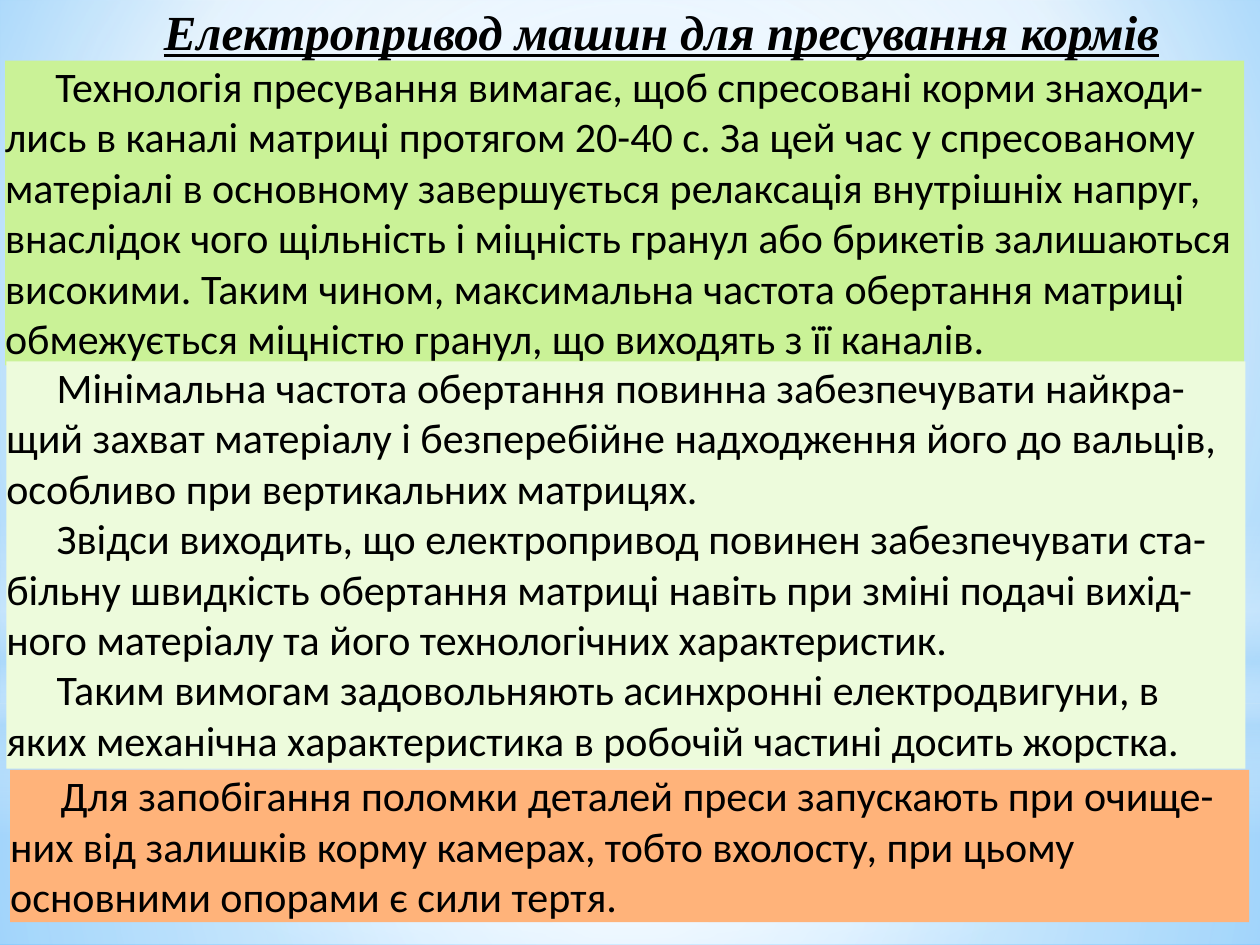
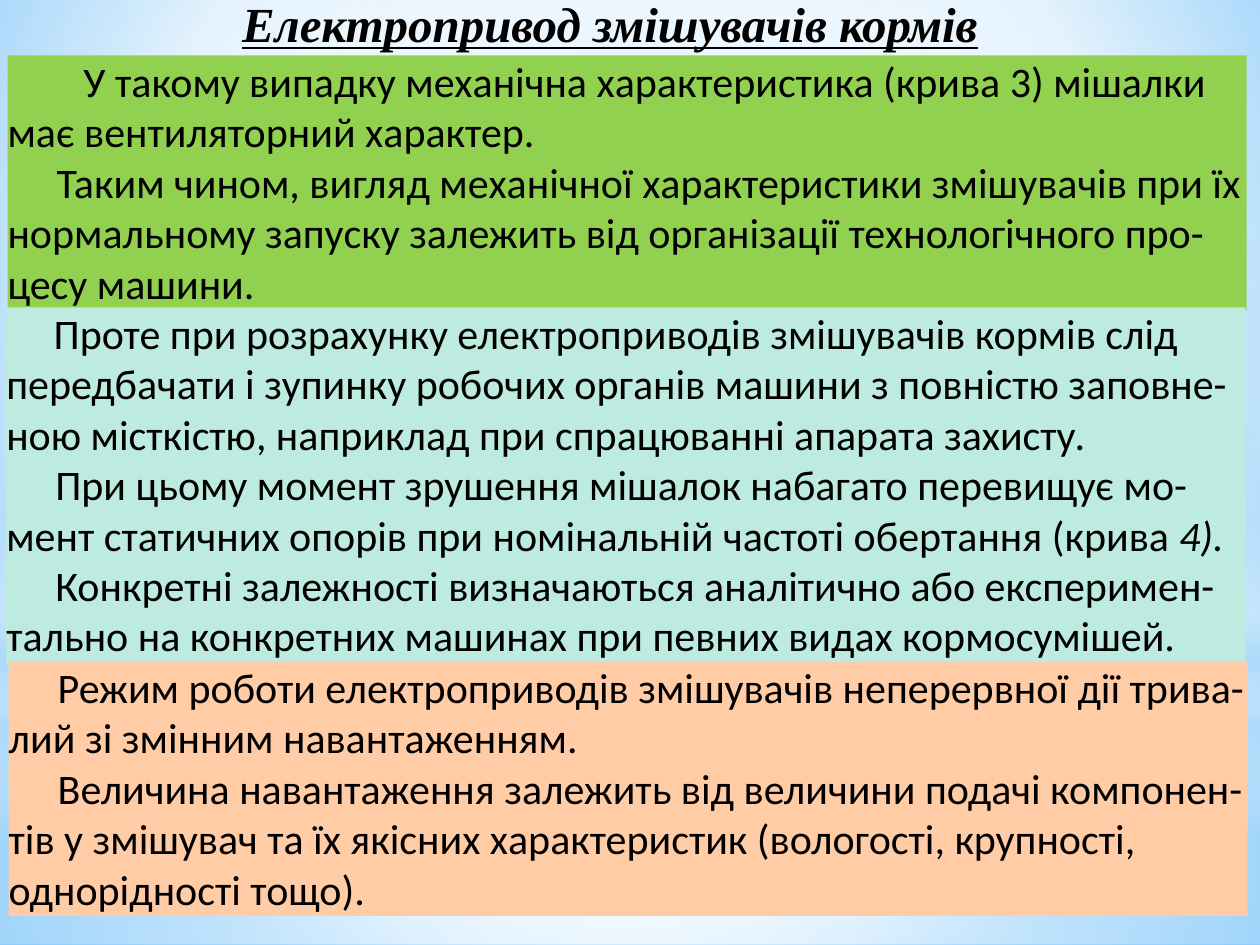
"""Build two slides on electric drives of feed presses and feed mixers."""
from lxml import etree
from pptx import Presentation
from pptx.dml.color import RGBColor
from pptx.enum.shapes import MSO_SHAPE
from pptx.enum.text import MSO_ANCHOR, MSO_AUTO_SIZE, PP_ALIGN
from pptx.oxml.ns import nsdecls, qn
from pptx.util import Pt

RECTANGLE, OVAL = MSO_SHAPE.RECTANGLE, MSO_SHAPE.OVAL
LEFT, CENTER = PP_ALIGN.LEFT, PP_ALIGN.CENTER
TOP, NO_FIT = MSO_ANCHOR.TOP, MSO_AUTO_SIZE.NONE
TITLE_ONLY = 5
WIDTH, HEIGHT = 720, 540
BAND_WIDTH = 708
BLACK, WHITE, PALE_BLUE = "000000", "FFFFFF", "B4DCFA"

TITLE_FONT = {"name": "Times New Roman", "size": Pt(28), "bold": True,
              "italic": True, "underline": True}
BODY_FONT = {"name": "Calibri", "size": Pt(24)}
FRAME = {"margin_left": 0, "margin_top": 0, "margin_right": 0, "margin_bottom": 0,
         "vertical_anchor": TOP, "auto_size": NO_FIT}

MIDDLE = (50, 50, 50, 50)
BACKDROP = ([(0, "9ED5FF", 100), (60, WHITE, 100), (100, "5BB9FF", 100)], (20, 10, 20, 60))
GLOWS = [
    (RECTANGLE, (402, 138), [(0, WHITE, 91), (37, WHITE, 76), (100, PALE_BLUE, 79)], MIDDLE),
    (RECTANGLE, (0, 402), [(0, WHITE, 89), (48, WHITE, 62), (100, PALE_BLUE, 79)], MIDDLE),
    (RECTANGLE, (297, 180), [(0, WHITE, 0), (29, WHITE, 30), (45, PALE_BLUE, 40),
                             (55, WHITE, 26), (65, PALE_BLUE, 60), (100, WHITE, 0)], None),
    (OVAL, (126, 402), [(0, WHITE, 100), (56, WHITE, 0)], MIDDLE),
]

SLIDES = [
    {
        "title": "Електропривод машин для пресування кормів",
        "place": (93.6, 0.7, 574.6, 33.8),
        "paragraph": {"alignment": LEFT, "line_spacing": 1.0},
        "wrap": False,
        "bands": [
            ("CAF297", (2.9, 34.6, 174.2), [
                (28.8, ["Технологія пресування вимагає, щоб спресовані корми знаходи-лись в каналі "
                        "матриці протягом 20-40 с. За цей час у спресованому матеріалі в основному "
                        "завершується релаксація внутрішніх напруг, внаслідок чого щільність і "
                        "міцність гранул або брикетів залишаються високими. Таким чином, "
                        "максимальна частота обертання матриці обмежується міцністю гранул, що "
                        "виходять з її каналів."])]),
            ("EDFBDC", (3.6, 206.6, 232.6), [
                (28.8, ["Мінімальна частота обертання повинна забезпечувати найкра-щий захват "
                        "матеріалу і безперебійне надходження його до вальців, особливо при "
                        "вертикальних матрицях."]),
                (28.8, ["Звідси виходить, що електропривод повинен забезпечувати ста-більну "
                        "швидкість обертання матриці навіть при зміні подачі вихід-ного матеріалу "
                        "та його технологічних характеристик."]),
                (28.8, ["Таким вимогам задовольняють асинхронні електродвигуни, в яких механічна "
                        "характеристика в робочій частині досить жорстка."])]),
            ("FFB37A", (5.8, 439.9, 87.1), [
                (28.8, ["Для запобігання поломки деталей преси запускають при очище-них від "
                        "залишків корму камерах, тобто вхолосту, при цьому основними опорами є "
                        "сили тертя."])]),
        ],
    },
    {
        "title": "Електропривод змішувачів кормів",
        "place": (42.5, 1.4, 612, 28.8),
        "paragraph": {"alignment": CENTER, "line_spacing": 0.85},
        "wrap": True,
        "bands": [
            ("92D050", (4.3, 31.7, 145.4), [
                (43.4, ["У такому випадку механічна характеристика (крива 3) мішалки має "
                        "вентиляторний характер."]),
                (28, ["Таким чином, вигляд механічної характеристики змішувачів при їх "
                      "нормальному запуску залежить від організації технологічного про-цесу "
                      "машини."])]),
            ("BEEBDF", (3.6, 175.7, 203.8), [
                (27.1, ["Проте при розрахунку електроприводів змішувачів кормів слід передбачати і "
                        "зупинку робочих органів машини з повністю заповне-ною місткістю, "
                        "наприклад при спрацюванні апарата захисту."]),
                (28, ["При цьому момент зрушення мішалок набагато перевищує мо-мент статичних "
                      "опорів при номінальній частоті обертання (крива ", "4)."]),
                (28, ["Конкретні залежності визначаються аналітично або експеримен-тально на "
                      "конкретних машинах при певних видах кормосумішей."])]),
            ("FFCCA6", (5, 378, 145.4), [
                (28, ["Режим роботи електроприводів змішувачів неперервної дії трива-лий зі "
                      "змінним навантаженням."]),
                (28, ["Величина навантаження залежить від величини подачі компонен-тів у змішувач "
                      "та їх якісних характеристик (вологості, крупності, однорідності тощо)."])]),
        ],
    },
]


def apply(target, values):
    for name, value in values.items():
        setattr(target, name, value)


def color(hex_code):
    return RGBColor.from_string(hex_code)


def style_font(font, values):
    apply(font, values)
    font.color.rgb = color(BLACK)


def paint_gradient(fill, element, stops, focus):
    fill.solid()
    colors = "".join(
        f'<a:gs pos="{place * 1000}"><a:srgbClr val="{code}">'
        f'<a:alpha val="{opacity * 1000}"/></a:srgbClr></a:gs>'
        for place, code, opacity in stops)
    if focus:
        edges = " ".join(f'{side}="{value * 1000}"' for side, value in zip("ltrb", focus))
        direction = f'<a:path path="circle"><a:fillToRect {edges}/></a:path>'
    else:
        direction = '<a:lin ang="5400000" scaled="0"/>'
    gradient = etree.fromstring(
        f'<a:gradFill {nsdecls("a")} rotWithShape="1"><a:gsLst>{colors}</a:gsLst>'
        f'{direction}</a:gradFill>')
    solid = next(element.iter(qn("a:solidFill")))
    solid.getparent().replace(solid, gradient)


def add_plain_shape(slide, kind, place):
    shape = slide.shapes.add_shape(kind, *map(Pt, place))
    shape.shadow.inherit = False
    shape.line.fill.background()
    return shape


def decorate_master(master, slide):
    paint_gradient(master.background.fill, master.element.cSld, *BACKDROP)
    tree = master.shapes.element
    for order, (kind, (top, height), stops, focus) in enumerate(GLOWS):
        glow = add_plain_shape(slide, kind, (0, top, WIDTH, height))
        paint_gradient(glow.fill, glow.element.spPr, stops, focus)
        glow.element.nvSpPr.cNvPr.set("id", str(100 + order))
        tree.insert(2 + order, glow.element)


def add_title(slide, content):
    title = slide.shapes.title
    apply(title, dict(zip(("left", "top", "width", "height"), map(Pt, content["place"]))))
    frame = title.text_frame
    frame.text = content["title"]
    apply(frame, FRAME | {"word_wrap": content["wrap"]})
    para = frame.paragraphs[0]
    apply(para, content["paragraph"])
    style_font(para.runs[0].font, TITLE_FONT)


def add_band(slide, fill_code, place, paragraphs):
    left, top, height = place
    box = add_plain_shape(slide, RECTANGLE, (left, top, BAND_WIDTH, height))
    box.fill.solid()
    box.fill.fore_color.rgb = color(fill_code)
    frame = box.text_frame
    apply(frame, FRAME | {"word_wrap": True})
    for order, (indent, spans) in enumerate(paragraphs):
        para = frame.add_paragraph() if order else frame.paragraphs[0]
        para.alignment = LEFT
        para._p.get_or_add_pPr().set("indent", str(Pt(indent)))
        for position, text in enumerate(spans):
            span = para.add_run()
            span.text = text
            style_font(span.font, BODY_FONT | {"italic": position > 0})


def main():
    deck = Presentation()
    deck.slide_width, deck.slide_height = Pt(WIDTH), Pt(HEIGHT)
    layout = deck.slide_layouts[TITLE_ONLY]
    pages = [deck.slides.add_slide(layout) for _ in SLIDES]
    decorate_master(deck.slide_master, pages[0])
    for page, content in zip(pages, SLIDES):
        add_title(page, content)
        for band in content["bands"]:
            add_band(page, *band)
    deck.save("out.pptx")


if __name__ == "__main__":
    main()
